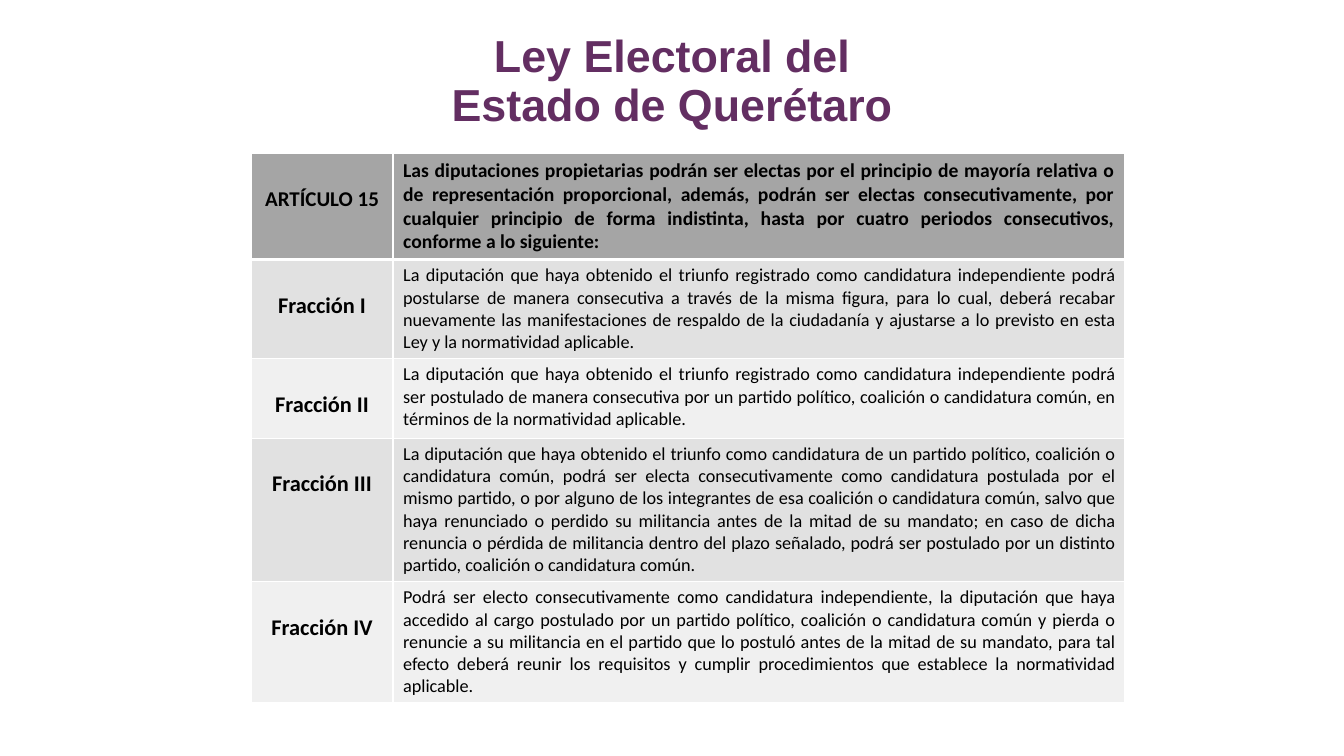
from lxml import etree
from pptx import Presentation
from pptx.dml.color import RGBColor
from pptx.enum.text import MSO_ANCHOR, MSO_AUTO_SIZE, PP_ALIGN
from pptx.oxml.ns import qn
from pptx.util import Pt

CENTER, JUSTIFY = PP_ALIGN.CENTER, PP_ALIGN.JUSTIFY
BOTTOM, NO_FIT = MSO_ANCHOR.BOTTOM, MSO_AUTO_SIZE.NONE
HEADER_FILL, DARK_BAND, LIGHT_BAND = "A5A5A5", "E1E1E1", "F0F0F0"

# Label, label size, text, text size, row height
ARTICLE_ROWS = [
    ("ARTÍCULO 15", 15,
     "Las diputaciones propietarias podrán ser electas por el principio de mayoría relativa o "
     "de representación proporcional, además, podrán ser electas consecutivamente, por "
     "cualquier principio de forma indistinta, hasta por cuatro periodos consecutivos, "
     "conforme a lo siguiente:", 14, 75.6),
    ("Fracción I", 16,
     "La diputación que haya obtenido el triunfo registrado como candidatura independiente podrá "
     "postularse de manera consecutiva a través de la misma figura, para lo cual, deberá recabar "
     "nuevamente las manifestaciones de respaldo de la ciudadanía y ajustarse a lo previsto en esta "
     "Ley y la normatividad aplicable.", 13, 70.7),
    ("Fracción II", 16,
     "La diputación que haya obtenido el triunfo registrado como candidatura independiente podrá "
     "ser postulado de manera consecutiva por un partido político, coalición o candidatura común, en "
     "términos de la normatividad aplicable.", 13, 56.9),
    ("Fracción III", 16,
     "La diputación que haya obtenido el triunfo como candidatura de un partido político, coalición o "
     "candidatura común, podrá ser electa consecutivamente como candidatura postulada por el "
     "mismo partido, o por alguno de los integrantes de esa coalición o candidatura común, salvo que "
     "haya renunciado o perdido su militancia antes de la mitad de su mandato; en caso de dicha "
     "renuncia o pérdida de militancia dentro del plazo señalado, podrá ser postulado por un distinto "
     "partido, coalición o candidatura común.", 13, 102.4),
    ("Fracción IV", 16,
     "Podrá ser electo consecutivamente como candidatura independiente, la diputación que haya "
     "accedido al cargo postulado por un partido político, coalición o candidatura común y pierda o "
     "renuncie a su militancia en el partido que lo postuló antes de la mitad de su mandato, para tal "
     "efecto deberá reunir los requisitos y cumplir procedimientos que establece la normatividad "
     "aplicable.", 13, 86.5),
]


def add_text(para, text, font_name, size, color, bold, align):
    para.alignment = align
    span = para.add_run()
    span.text = text
    span.font.name = font_name
    span.font.size = Pt(size)
    span.font.bold = bold
    span.font.color.rgb = RGBColor.from_string(color)


def add_white_borders(cell, top, bottom):
    """Put the four border lines ahead of the cell's fill, as the schema asks."""
    properties = cell._tc.get_or_add_tcPr()
    sides = [("a:lnL", 1), ("a:lnR", 1), ("a:lnT", top), ("a:lnB", bottom)]
    for position, (tag, width) in enumerate(sides):
        line = etree.Element(qn(tag), w=str(Pt(width)))
        fill = etree.SubElement(line, qn("a:solidFill"))
        etree.SubElement(fill, qn("a:srgbClr"), val="FFFFFF")
        properties.insert(position, line)


deck = Presentation()
deck.slide_width, deck.slide_height = Pt(960), Pt(540)
page = deck.slides.add_slide(deck.slide_layouts[5])

title = page.shapes.title
title.left, title.top, title.width, title.height = Pt(289.4), Pt(23), Pt(381.6), Pt(74.2)
title.text_frame.word_wrap = True
title.text_frame.auto_size = NO_FIT
title.text_frame.vertical_anchor = BOTTOM
heading = title.text_frame.paragraphs[0]
heading.line_spacing = 0.9
add_text(heading, "Ley Electoral del Estado de Querétaro", "Arial", 32, "632E62", True, CENTER)

table_height = sum(row[-1] for row in ARTICLE_ROWS)
table = page.shapes.add_table(len(ARTICLE_ROWS), 2, Pt(179.3), Pt(109.8),
                              Pt(624.2), Pt(table_height)).table
table.first_row = False
table.horz_banding = False
table.columns[0].width, table.columns[1].width = Pt(101.5), Pt(522.7)

for index, (label, label_size, text, text_size, height) in enumerate(ARTICLE_ROWS):
    table.rows[index].height = Pt(height)
    is_header = index == 0
    band = HEADER_FILL if is_header else DARK_BAND if index % 2 else LIGHT_BAND
    label_cell, text_cell = table.cell(index, 0), table.cell(index, 1)
    for cell in (label_cell, text_cell):
        cell.fill.solid()
        cell.fill.fore_color.rgb = RGBColor.from_string(band)
        add_white_borders(cell, top=3 if index == 1 else 1, bottom=3 if is_header else 1)
    label_cell.margin_top = Pt(23.1)
    add_text(label_cell.text_frame.paragraphs[0], label, "Calibri", label_size,
             "000000", True, CENTER)
    add_text(text_cell.text_frame.paragraphs[0], text, "Calibri", text_size,
             "000000", is_header, JUSTIFY)

deck.save("out.pptx")
